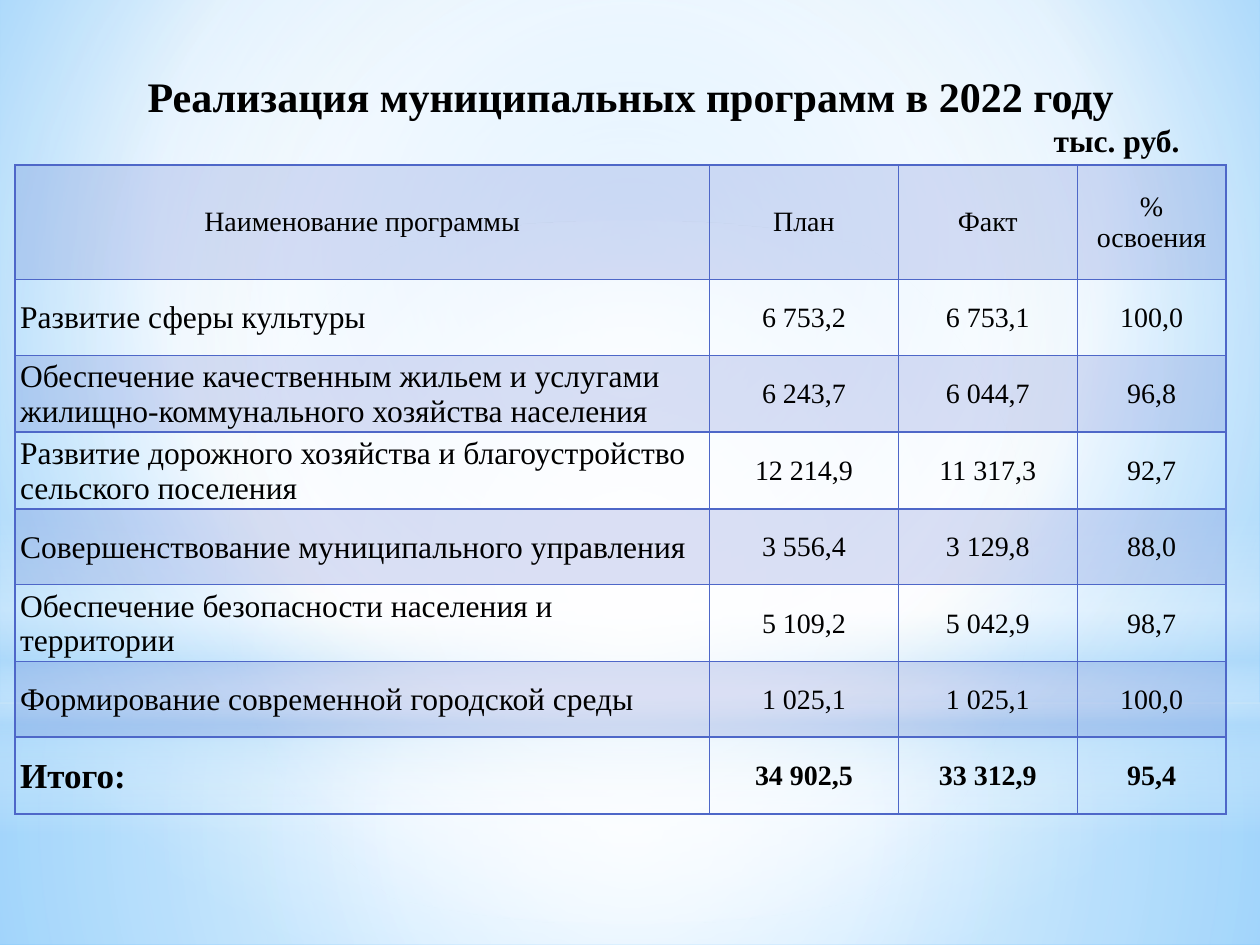
"""Build a slide with a table of municipal programme spending for 2022."""
from lxml.etree import SubElement
from pptx import Presentation
from pptx.dml.color import RGBColor
from pptx.enum.shapes import MSO_SHAPE
from pptx.enum.text import MSO_ANCHOR, PP_ALIGN
from pptx.oxml.ns import qn
from pptx.util import Pt

BLACK = RGBColor(0x00, 0x00, 0x00)
WHITE = RGBColor(0xFF, 0xFF, 0xFF)
INDIGO = RGBColor(0x4E, 0x67, 0xC8)
SKY = RGBColor(0x9E, 0xD5, 0xFF)
BLUE = RGBColor(0x5B, 0xB9, 0xFF)
PALE = RGBColor(0xB4, 0xDC, 0xFA)


def add_text(p, text, size=16, bold=False, align=PP_ALIGN.CENTER):
    p.alignment = align
    r = p.add_run()
    r.text = text
    r.font.name = "Times New Roman"
    r.font.size = Pt(size)
    r.font.bold = bold
    r.font.color.rgb = BLACK


def set_gradient(fill, parent, stops, centre=None):
    fill.gradient()
    grad = parent.find(".//" + qn("a:gradFill"))
    for child in list(grad):
        grad.remove(child)
    gs_lst = SubElement(grad, qn("a:gsLst"))
    for pos, color, alpha in stops:
        gs = SubElement(gs_lst, qn("a:gs"), pos=str(pos * 1000))
        clr = SubElement(gs, qn("a:srgbClr"), val=str(color))
        SubElement(clr, qn("a:alpha"), val=str(alpha * 1000))
    if centre:
        path = SubElement(grad, qn("a:path"), path="circle")
        sides = {k: str(v * 1000) for k, v in zip("ltrb", centre)}
        SubElement(path, qn("a:fillToRect"), **sides)
    else:
        SubElement(grad, qn("a:lin"), ang="5400000", scaled="0")


prs = Presentation()
prs.slide_width, prs.slide_height = Pt(720), Pt(540)
s = prs.slides.add_slide(prs.slide_layouts[6])

set_gradient(s.background.fill, s._element,
             [(0, SKY, 100), (60, WHITE, 100), (100, BLUE, 100)], (20, 10, 20, 60))

MIDDLE = (50, 50, 50, 50)
glows = [
    (MSO_SHAPE.RECTANGLE, 401.76, 138.24, MIDDLE,
     [(0, WHITE, 91), (37, WHITE, 76), (100, PALE, 79)]),
    (MSO_SHAPE.RECTANGLE, 0, 401.76, MIDDLE,
     [(0, WHITE, 89), (48, WHITE, 62), (100, PALE, 79)]),
    (MSO_SHAPE.RECTANGLE, 296.64, 180, None,
     [(0, WHITE, 0), (29, WHITE, 30), (45, PALE, 40),
      (55, WHITE, 26), (65, PALE, 60), (100, WHITE, 0)]),
    (MSO_SHAPE.OVAL, 126, 401.76, MIDDLE, [(0, WHITE, 100), (56, WHITE, 0)]),
]
for shape, top, height, centre, stops in glows:
    sp = s.shapes.add_shape(shape, 0, Pt(top), prs.slide_width, Pt(height))
    sp.shadow.inherit = False
    sp.line.fill.background()
    set_gradient(sp.fill, sp._element, stops, centre)

tf = s.shapes.add_textbox(Pt(39.6), Pt(33.84), Pt(641.52), Pt(33.84)).text_frame
tf.word_wrap = True
tf.margin_top = Pt(6.4)
add_text(tf.paragraphs[0], "Реализация муниципальных программ в 2022 году", size=24, bold=True)
add_text(tf.add_paragraph(), "тыс. руб.", size=18, bold=True, align=PP_ALIGN.RIGHT)

rows = [
    ("Наименование программы", "План", "Факт", "% освоения"),
    ("Развитие сферы культуры", "6 753,2", "6 753,1", "100,0"),
    ("Обеспечение качественным жильем и услугами жилищно-коммунального хозяйства населения",
     "6 243,7", "6 044,7", "96,8"),
    ("Развитие дорожного хозяйства и благоустройство сельского поселения",
     "12 214,9", "11 317,3", "92,7"),
    ("Совершенствование муниципального управления", "3 556,4", "3 129,8", "88,0"),
    ("Обеспечение безопасности населения и территории", "5 109,2", "5 042,9", "98,7"),
    ("Формирование современной городской среды", "1 025,1", "1 025,1", "100,0"),
    ("Итого:", "34 902,5", "33 312,9", "95,4"),
]
widths = [396.72, 108, 102.24, 84.96]
heights = [65.52, 43.2, 33.12, 33.12, 43.2, 43.2, 43.2, 43.92]
tbl = s.shapes.add_table(len(rows), len(widths), Pt(8.64), Pt(94.32),
                         Pt(sum(widths)), Pt(sum(heights))).table
tbl.first_row = tbl.horz_banding = False
for col, width in zip(tbl.columns, widths):
    col.width = Pt(width)
for row, height in zip(tbl.rows, heights):
    row.height = Pt(height)

for i, values in enumerate(rows):
    header, total = i == 0, i == len(rows) - 1
    for j, value in enumerate(values):
        cell = tbl.cell(i, j)
        cell.vertical_anchor = MSO_ANCHOR.MIDDLE
        name = j == 0 and not header
        cell.margin_left = Pt(7.2 if header else 2.88 if name else 0.72)
        cell.margin_right = Pt(7.2 if header else 0.72)
        cell.margin_top = Pt(3.6 if header else 0.72)
        cell.margin_bottom = Pt(3.6 if header else 0)
        size = (20 if total else 18) if name else 16
        add_text(cell.text_frame.paragraphs[0], value, size=size, bold=total,
                 align=PP_ALIGN.LEFT if name else PP_ALIGN.CENTER)
        tc_pr = cell._tc.get_or_add_tcPr()
        for side in "LRTB":
            ln = SubElement(tc_pr, qn(f"a:ln{side}"), w=str(Pt(1)))
            SubElement(SubElement(ln, qn("a:solidFill")), qn("a:srgbClr"), val=str(INDIGO))
        if i % 2:
            cell.fill.background()
        else:
            cell.fill.solid()
            cell.fill.fore_color.rgb = INDIGO
            clr = tc_pr.find(qn("a:solidFill")).find(qn("a:srgbClr"))
            SubElement(clr, qn("a:alpha"), val="20000")

prs.save("out.pptx")
